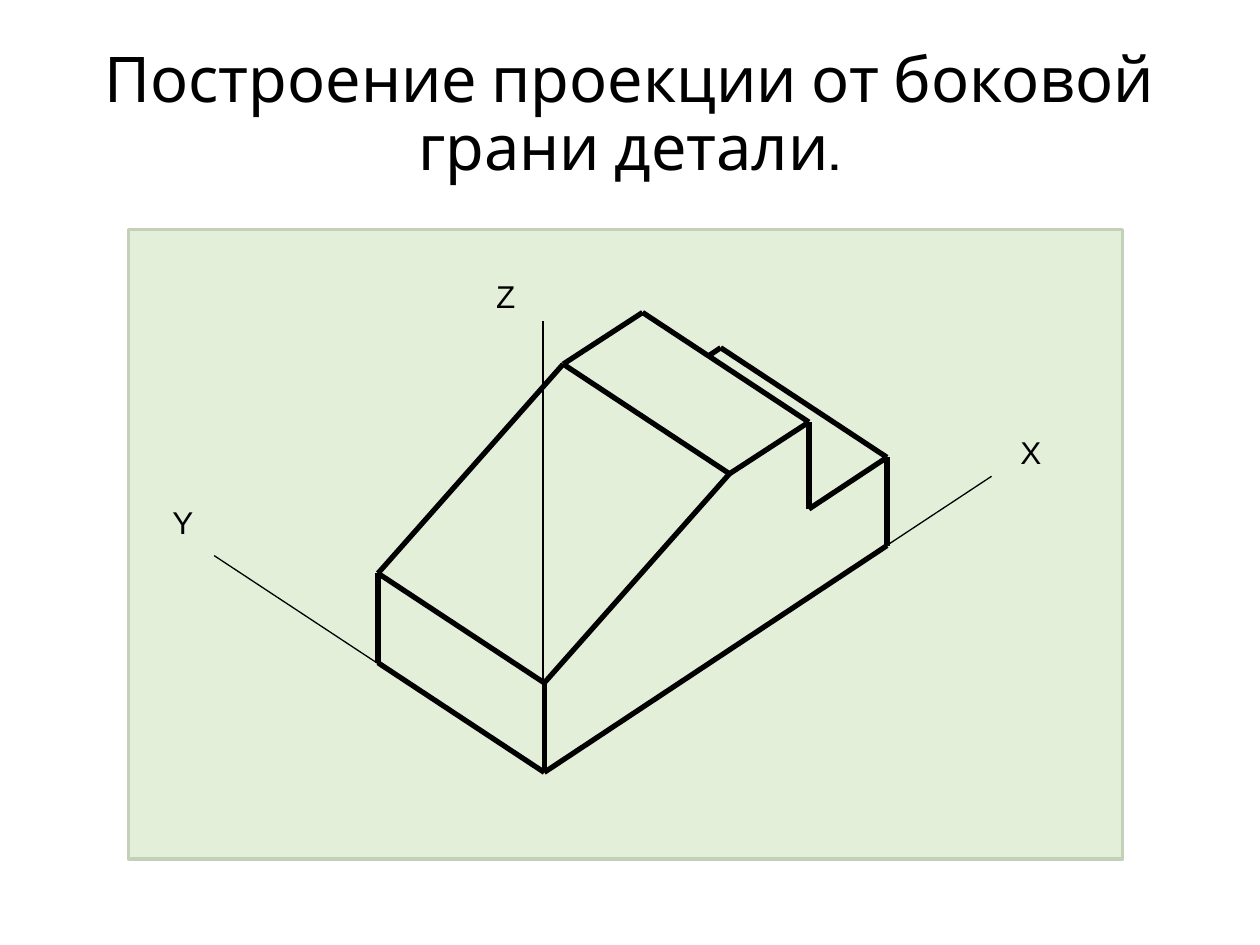
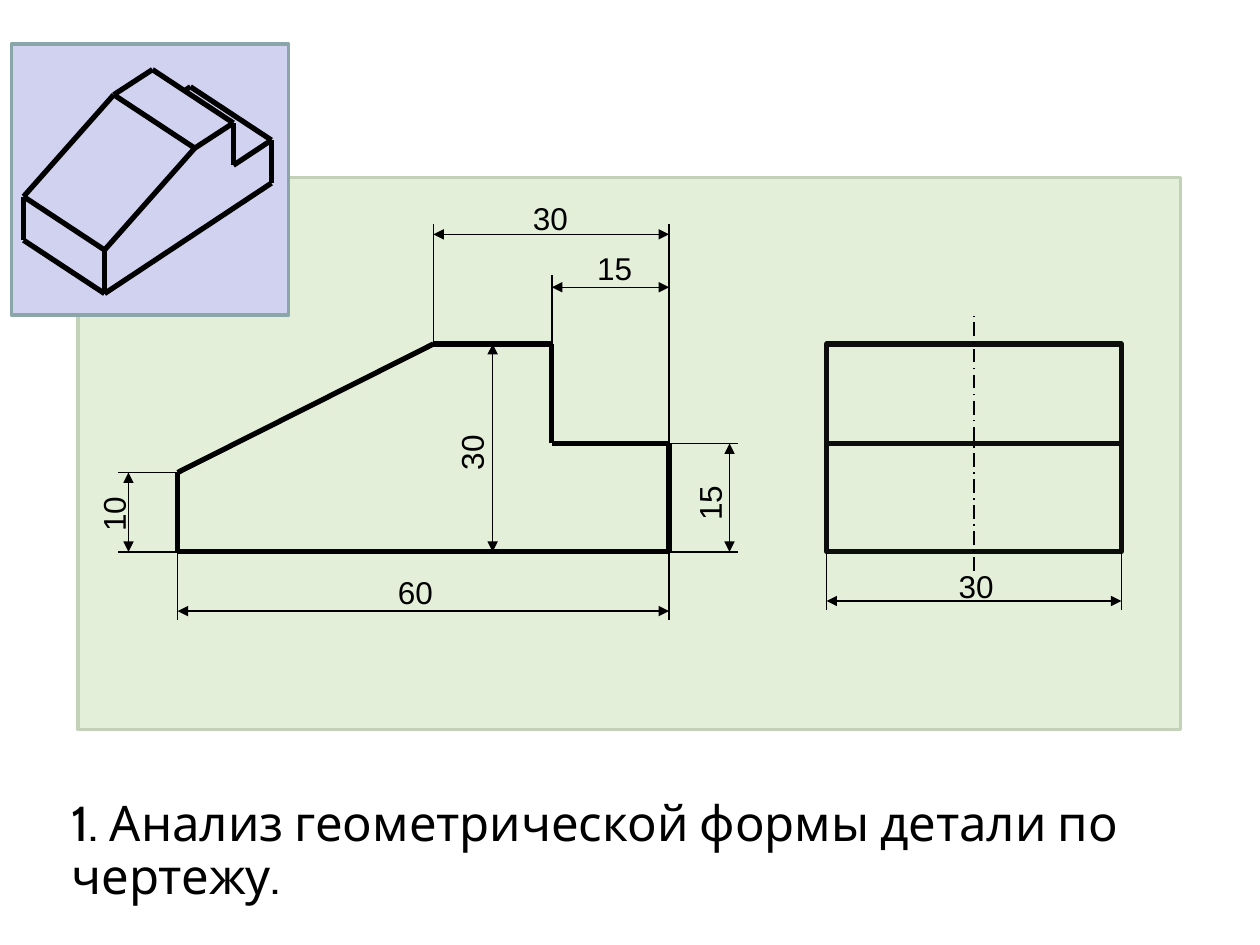
from dataclasses import dataclass
from itertools import pairwise
from typing import NamedTuple

from pptx import Presentation
from pptx.dml.color import RGBColor
from pptx.enum.dml import MSO_LINE
from pptx.enum.shapes import MSO_CONNECTOR, MSO_SHAPE
from pptx.enum.text import MSO_ANCHOR, PP_ALIGN
from pptx.oxml.ns import qn
from pptx.slide import Slide
from pptx.util import Inches, Pt
from lxml import etree

STRAIGHT = MSO_CONNECTOR.STRAIGHT
RECTANGLE = MSO_SHAPE.RECTANGLE
CENTRE_LINE = MSO_LINE.LONG_DASH_DOT
LEFT, CENTRE = PP_ALIGN.LEFT, PP_ALIGN.CENTER
TOP, MIDDLE = MSO_ANCHOR.TOP, MSO_ANCHOR.MIDDLE


@dataclass(frozen=True)
class Theme:
    ink: str = "000000"
    view_edge: str = "0D0D0D"
    panel_fill: str = "E4EFD9"
    panel_edge: str = "C3D1B9"
    inset_fill: str = "D1D1F0"
    inset_edge: str = "8AA6A8"
    title_font: str = "Cabin"
    label_font: str = "Arial"
    title_size: float = 36
    step_size: float = 28
    label_size: float = 18
    thin: float = 0.75
    axis: float = 1
    frame: float = 2
    thick: float = 3


THEME = Theme()


class Point(NamedTuple):
    x: float
    y: float


class Area(NamedTuple):
    left: float
    top: float
    width: float
    height: float


class Label(NamedTuple):
    text: str
    left: float
    top: float
    rotation: int = 0


class Dimension(NamedTuple):
    start: Point
    end: Point
    label: Label


LABEL_WIDTH, LABEL_HEIGHT = 0.48, 0.4
DEPTH = Point(-1.32, -0.87)
FRONT_FACE = [
    Point(0, 0),
    Point(2.72, -1.8),
    Point(2.72, -2.5),
    Point(2.1, -2.09),
    Point(2.1, -2.78),
    Point(1.47, -2.37),
    Point(0, -0.71),
]

PART_LEFT, PART_RIGHT = 1.41, 5.31
SLOPE_END, STEP = 3.44, 4.38
PART_TOP, SHELF, SLOPE_START, PART_BOTTOM = 2.73, 3.52, 3.75, 4.38
SIDE_LEFT, SIDE_RIGHT = 6.56, 8.9
PROFILE = [
    Point(PART_LEFT, PART_BOTTOM),
    Point(PART_RIGHT, PART_BOTTOM),
    Point(PART_RIGHT, SHELF),
    Point(STEP, SHELF),
    Point(STEP, PART_TOP),
    Point(SLOPE_END, PART_TOP),
    Point(PART_LEFT, SLOPE_START),
]
EXTENSIONS = [
    (Point(SLOPE_END, PART_TOP), Point(SLOPE_END, 1.78)),
    (Point(PART_RIGHT, SHELF), Point(PART_RIGHT, 1.78)),
    (Point(STEP, PART_TOP), Point(STEP, 2.18)),
    *((Point(x, PART_BOTTOM), Point(x, 4.92)) for x in (PART_LEFT, PART_RIGHT)),
    *((Point(x, PART_BOTTOM), Point(x, 4.84)) for x in (SIDE_LEFT, SIDE_RIGHT)),
    *((Point(PART_LEFT, y), Point(0.94, y)) for y in (SLOPE_START, PART_BOTTOM)),
    *((Point(PART_RIGHT, y), Point(5.86, y)) for y in (SHELF, PART_BOTTOM)),
]
DIMENSIONS = [
    Dimension(Point(PART_LEFT, 4.85), Point(PART_RIGHT, 4.85), Label("60", 3.06, 4.5)),
    Dimension(Point(SLOPE_END, 1.86), Point(PART_RIGHT, 1.86), Label("30", 4.13, 1.53)),
    Dimension(Point(STEP, 2.28), Point(PART_RIGHT, 2.28), Label("15", 4.64, 1.93)),
    Dimension(Point(SIDE_LEFT, 4.77), Point(SIDE_RIGHT, 4.77), Label("30", 7.51, 4.45)),
    Dimension(Point(3.91, PART_TOP), Point(3.91, PART_BOTTOM), Label("30", 3.5, 3.39, 270)),
    Dimension(Point(5.79, SHELF), Point(5.79, PART_BOTTOM), Label("15", 5.39, 3.79, 270)),
    Dimension(Point(1.02, SLOPE_START), Point(1.02, PART_BOTTOM), Label("10", 0.66, 3.88, 270)),
]


def colour(code: str) -> RGBColor:
    return RGBColor.from_string(code)


def add_line(page: Slide, start: Point, end: Point, *, width: float = THEME.thin,
             dash: MSO_LINE | None = None, arrows: bool = False) -> None:
    connector = page.shapes.add_connector(
        STRAIGHT, Inches(start.x), Inches(start.y), Inches(end.x), Inches(end.y))
    connector.line.width = Pt(width)
    connector.line.color.rgb = colour(THEME.ink)
    if dash is not None:
        connector.line.dash_style = dash
    properties = connector._element.spPr
    if arrows:
        outline = properties.find(qn("a:ln"))
        for tag in ("a:headEnd", "a:tailEnd"):
            etree.SubElement(outline, qn(tag), type="triangle")
    etree.SubElement(properties, qn("a:effectLst"))


def add_rectangle(page: Slide, area: Area, *, edge: str, width: float,
                  fill: str | None = None) -> None:
    shape = page.shapes.add_shape(RECTANGLE, *map(Inches, area))
    shape.shadow.inherit = False
    if fill is None:
        shape.fill.background()
    else:
        shape.fill.solid()
        shape.fill.fore_color.rgb = colour(fill)
    shape.line.color.rgb = colour(edge)
    shape.line.width = Pt(width)


def add_text(page: Slide, text: str, area: Area, *, font: str = THEME.label_font,
             size: float = THEME.label_size, align: PP_ALIGN = LEFT,
             anchor: MSO_ANCHOR = TOP, wrap: bool = False, spacing: float = 1.0,
             rotation: int = 0) -> None:
    box = page.shapes.add_textbox(*map(Inches, area))
    box.rotation = rotation
    box.text_frame.word_wrap = wrap
    box.text_frame.vertical_anchor = anchor
    para = box.text_frame.paragraphs[0]
    para.alignment = align
    para.line_spacing = spacing
    span = para.add_run()
    span.text = text
    span.font.name = font
    span.font.size = Pt(size)
    span.font.color.rgb = colour(THEME.ink)


def add_title(page: Slide, text: str, area: Area, *, size: float,
              align: PP_ALIGN = LEFT) -> None:
    add_text(page, text, area, font=THEME.title_font, size=size, align=align,
             anchor=MIDDLE, wrap=True, spacing=0.9)


def add_label(page: Slide, label: Label, width: float = LABEL_WIDTH) -> None:
    add_text(page, label.text, Area(label.left, label.top, width, LABEL_HEIGHT),
             rotation=label.rotation)


def add_panel(page: Slide, area: Area) -> None:
    add_rectangle(page, area, fill=THEME.panel_fill, edge=THEME.panel_edge,
                  width=THEME.frame)


def add_solid(page: Slide, corner: Point, scale: float = 1) -> None:
    def place(point: Point) -> Point:
        return Point(corner.x + scale * point.x, corner.y + scale * point.y)

    def behind(point: Point) -> Point:
        return Point(point.x + DEPTH.x, point.y + DEPTH.y)

    base, _, shelf_end, _, step_top, ridge, slope_foot = FRONT_FACE
    edges = list(pairwise(FRONT_FACE + [base]))
    edges += [(point, behind(point))
              for point in (base, slope_foot, ridge, step_top, shelf_end)]
    edges += pairwise(behind(point) for point in (base, slope_foot, ridge, step_top))
    edges.append((behind(shelf_end), Point(1.31, -3.31)))
    for start, end in edges:
        add_line(page, place(start), place(end), width=THEME.thick)


def build_projection(page: Slide) -> None:
    add_panel(page, Area(1.02, 1.82, 7.89, 5))
    origin = Point(4.31, 6.13)
    axes = [
        (Point(4.31, 2.55), Label("Z", 3.84, 2.15)),
        (Point(1.7, 4.41), Label("Y", 1.27, 3.94)),
        (Point(7.87, 3.78), Label("Х", 8, 3.39)),
    ]
    for tip, label in axes:
        add_line(page, tip, origin)
        add_label(page, label, width=0.37)
    add_solid(page, Point(4.32, 6.13))
    add_title(page, "Построение проекции от боковой грани детали.",
              Area(0.5, 0.3, 9, 1.25), size=THEME.title_size, align=CENTRE)


def build_analysis(page: Slide) -> None:
    add_panel(page, Area(0.62, 1.41, 8.75, 4.38))
    add_title(page, "1. Анализ геометрической формы детали по чертежу.",
              Area(0.47, 6.33, 9, 0.86), size=THEME.step_size)
    for top, bottom in pairwise((PART_TOP, SHELF, PART_BOTTOM)):
        add_rectangle(page, Area(SIDE_LEFT, top, SIDE_RIGHT - SIDE_LEFT, bottom - top),
                      edge=THEME.view_edge, width=THEME.thick)
    add_line(page, Point(7.73, 4.53), Point(7.73, 2.5), width=THEME.axis, dash=CENTRE_LINE)
    for start, end in EXTENSIONS:
        add_line(page, start, end)
    for start, end in pairwise(PROFILE + PROFILE[:1]):
        add_line(page, start, end, width=THEME.thick)
    for dimension in DIMENSIONS:
        add_line(page, dimension.start, dimension.end, arrows=True)
        add_label(page, dimension.label)
    add_rectangle(page, Area(0.09, 0.35, 2.2, 2.15), fill=THEME.inset_fill,
                  edge=THEME.inset_edge, width=THEME.frame)
    add_solid(page, Point(0.83, 2.33), scale=0.487)


def main() -> None:
    deck = Presentation()
    deck.slide_width, deck.slide_height = Inches(10), Inches(7.5)
    blank = deck.slide_layouts[6]
    for build in (build_projection, build_analysis):
        build(deck.slides.add_slide(blank))
    deck.save("out.pptx")


if __name__ == "__main__":
    main()
